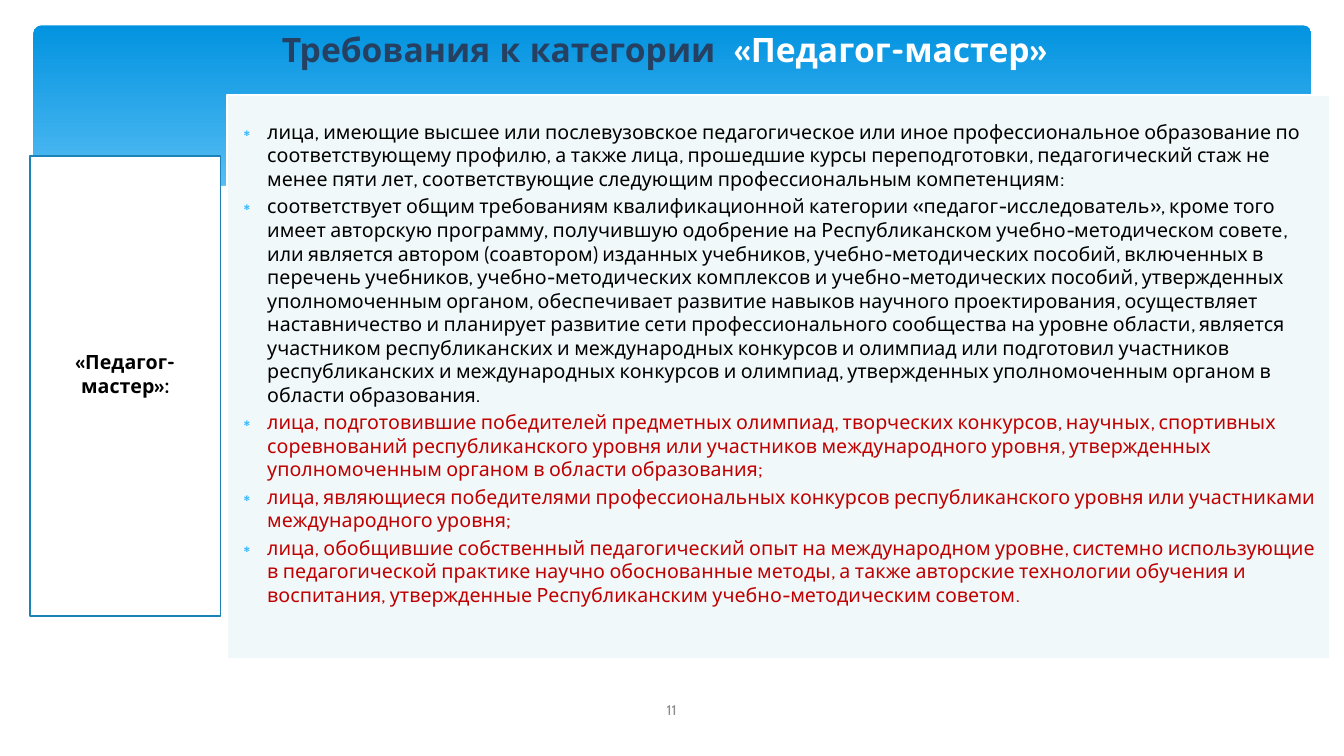
from dataclasses import dataclass

from lxml import etree
from pptx import Presentation
from pptx.dml.color import RGBColor
from pptx.enum.shapes import MSO_SHAPE
from pptx.enum.text import MSO_ANCHOR, MSO_AUTO_SIZE, PP_ALIGN
from pptx.oxml.ns import qn
from pptx.util import Cm, Pt

CENTER, LEFT = PP_ALIGN.CENTER, PP_ALIGN.LEFT
MIDDLE = MSO_ANCHOR.MIDDLE
NO_AUTOFIT = MSO_AUTO_SIZE.NONE
RECTANGLE, ROUNDED = MSO_SHAPE.RECTANGLE, MSO_SHAPE.ROUNDED_RECTANGLE


@dataclass(frozen=True)
class Theme:
    heading_font: str = "Quicksand"
    body_font: str = "Cabin"
    title_size: int = 24
    text_size: int = 14
    number_size: int = 10
    white: str = "FFFFFF"
    black: str = "000000"
    navy: str = "254061"
    red: str = "C00000"
    gray: str = "8C8C8C"
    banner_top: str = "0293E0"
    banner_bottom: str = "83D3FE"
    panel: str = "F0F8FA"
    border: str = "1C83B9"
    bullet: str = "31B6FD"


theme = Theme()


def add_text(para, text, font=theme.body_font, size=theme.text_size,
             color=theme.black, bold=False, align=LEFT):
    para.alignment = align
    span = para.add_run()
    span.text = text
    span.font.name = font
    span.font.size = Pt(size)
    span.font.bold = bold
    span.font.color.rgb = RGBColor.from_string(color)


def paint(shape, fill, line=None):
    shape.fill.solid()
    shape.fill.fore_color.rgb = RGBColor.from_string(fill)
    if line:
        shape.line.color.rgb = RGBColor.from_string(line)
        shape.line.width = Pt(1.25)
    else:
        shape.line.fill.background()


deck = Presentation()
deck.slide_width, deck.slide_height = Cm(33.87), Cm(19.05)
page = deck.slides.add_slide(deck.slide_layouts[1])
shapes = page.shapes
title, body = shapes.title, page.placeholders[1]

# Banner with a vertical gradient
banner = shapes.add_shape(ROUNDED, Cm(0.84), Cm(0.64), Cm(32.21), Cm(6.86))
banner.adjustments[0] = 0.03
banner.shadow.inherit = False
banner.line.fill.background()
banner.fill.gradient()
banner.fill.gradient_angle = 270
stops = zip(banner.fill.gradient_stops, (0, 0.9), (theme.banner_top, theme.banner_bottom))
for stop, position, color in stops:
    stop.position = position
    stop.color.rgb = RGBColor.from_string(color)

# White wave along the lower edge of the banner
wave_points = [
    (0.79, 5.41), (1.37, 5.21), (2.26, 5), (3.61, 4.8), (4.93, 4.7),
    (6.55, 4.67), (8.46, 4.72), (10.69, 4.93), (12.34, 5.13), (15.14, 5.59),
    (17.93, 6.07), (20.42, 6.45), (22.63, 6.73), (25.2, 6.96), (27.86, 7.04),
    (30.05, 6.88), (31.85, 6.58), (33.1, 6.25), (33.1, 8.36), (0.79, 8.36),
]
outline = [(Cm(x), Cm(y)) for x, y in wave_points]
builder = shapes.build_freeform(*outline[0])
builder.add_line_segments(outline[1:], close=True)
wave = builder.convert_to_shape()
wave.shadow.inherit = False
paint(wave, theme.white)

# Title, in front of the banner
title.left, title.top, title.width, title.height = Cm(1.5), Cm(0.66), Cm(30.48), Cm(1.14)
title.text_frame.auto_size = NO_AUTOFIT
title.text_frame.vertical_anchor = MIDDLE
for text, color in (("Требования к категории  ", theme.navy), ("«Педагог-мастер»", theme.white)):
    add_text(title.text_frame.paragraphs[0], text, font=theme.heading_font,
             size=theme.title_size, color=color, bold=True, align=CENTER)

# Requirements list
requirements = [
    ("лица, имеющие высшее или послевузовское педагогическое или иное профессиональное "
     "образование по соответствующему профилю, а также лица, прошедшие курсы переподготовки, "
     "педагогический стаж не менее пяти лет, соответствующие следующим профессиональным "
     "компетенциям:", theme.black),
    ("соответствует общим требованиям квалификационной категории «педагог-исследователь», "
     "кроме того имеет авторскую программу, получившую одобрение на Республиканском "
     "учебно-методическом совете, или является автором (соавтором) изданных учебников, "
     "учебно-методических пособий, включенных в перечень учебников, учебно-методических "
     "комплексов и учебно-методических пособий, утвержденных уполномоченным органом, "
     "обеспечивает развитие навыков научного проектирования, осуществляет наставничество и "
     "планирует развитие сети профессионального сообщества на уровне области, является "
     "участником республиканских и международных конкурсов и олимпиад или подготовил "
     "участников республиканских и международных конкурсов и олимпиад, утвержденных "
     "уполномоченным органом в области образования.", theme.black),
    ("лица, подготовившие победителей предметных олимпиад, творческих конкурсов, научных, "
     "спортивных соревнований республиканского уровня или участников международного уровня, "
     "утвержденных уполномоченным органом в области образования;", theme.red),
    ("лица, являющиеся победителями профессиональных конкурсов республиканского уровня или "
     "участниками международного уровня;", theme.red),
    ("лица, обобщившие собственный педагогический опыт на международном уровне, системно "
     "использующие в педагогической практике научно обоснованные методы, а также авторские "
     "технологии обучения и воспитания, утвержденные Республиканским учебно-методическим "
     "советом.", theme.red),
]
body.left, body.top, body.width, body.height = Cm(5.72), Cm(2.39), Cm(27.79), Cm(14.22)
paint(body, theme.panel, theme.white)
frame = body.text_frame
frame.auto_size = NO_AUTOFIT
frame.vertical_anchor = MIDDLE
frame.margin_bottom = Cm(0.83)
for index, (text, color) in enumerate(requirements):
    para = frame.add_paragraph() if index else frame.paragraphs[0]
    add_text(para, text, color=color)
    para.space_before = Pt(2.8)
    properties = para._p.get_or_add_pPr()
    properties.set("marL", str(Cm(0.76)))
    properties.set("indent", str(-Cm(0.76)))
    bullet_color = etree.SubElement(properties, qn("a:buClr"))
    etree.SubElement(bullet_color, qn("a:srgbClr"), val=theme.bullet)
    etree.SubElement(properties, qn("a:buChar"), char="∗")

# Placeholders go in front of the banner and the wave
for placeholder in (title, body):
    shapes._spTree.append(placeholder._element)

# Category box on the left
category = shapes.add_shape(RECTANGLE, Cm(0.76), Cm(3.94), Cm(4.8), Cm(11.58))
category.shadow.inherit = False
paint(category, theme.white, theme.border)
category.text_frame.word_wrap = True
category.text_frame.vertical_anchor = MIDDLE
category.text_frame.margin_bottom = Cm(0.75)
add_text(category.text_frame.paragraphs[0], "«Педагог-мастер»:",
         font=theme.heading_font, bold=True, align=CENTER)

# Page number
number = shapes.add_textbox(Cm(14.78), Cm(17.37), Cm(4.29), Cm(1.02))
number.text_frame.word_wrap = True
number.text_frame.vertical_anchor = MIDDLE
add_text(number.text_frame.paragraphs[0], "11", size=theme.number_size,
         color=theme.gray, align=CENTER)

deck.save("out.pptx")
